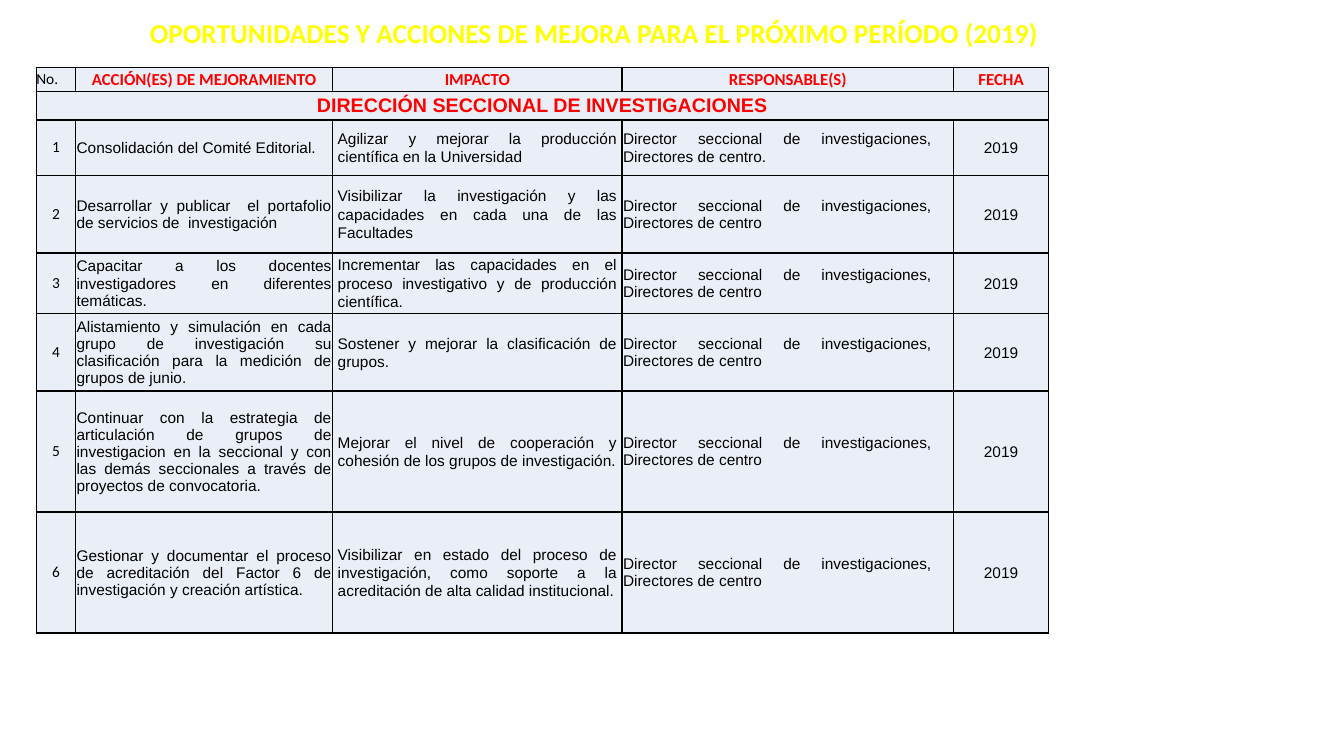
"""Build the slide of improvement actions for 2019."""
from lxml.etree import SubElement
from pptx import Presentation
from pptx.dml.color import RGBColor
from pptx.enum.text import MSO_ANCHOR as Anchor, PP_ALIGN as Align
from pptx.oxml.ns import qn
from pptx.util import Inches, Pt

YELLOW = RGBColor(0xFF, 0xFF, 0x00)
RED = RGBColor(0xFF, 0x00, 0x00)
BLACK = RGBColor(0x00, 0x00, 0x00)
PALE_BLUE = RGBColor(0xEA, 0xEF, 0xF7)

HEADINGS = ["No.", "ACCIÓN(ES) DE MEJORAMIENTO", "IMPACTO", "RESPONSABLE(S)", "FECHA"]
SECTION = "DIRECCIÓN SECCIONAL DE INVESTIGACIONES"
RESPONSIBLE = "Director seccional de investigaciones,  Directores de centro"
ACTIONS = [
    ("Consolidación del Comité Editorial.",
     "Agilizar y mejorar la producción científica en la Universidad"),
    ("Desarrollar y publicar  el portafolio de servicios de  investigación",
     "Visibilizar la investigación y las capacidades en cada una de las Facultades"),
    ("Capacitar a los docentes investigadores en diferentes temáticas.",
     "Incrementar las capacidades en el proceso investigativo y de producción científica."),
    ("Alistamiento y simulación en cada grupo de investigación su clasificación "
     "para la medición de grupos de junio.",
     "Sostener y mejorar la clasificación de grupos."),
    ("Continuar con la estrategia de articulación de grupos de investigacion en la "
     "seccional y con las demás seccionales a través de proyectos de convocatoria.",
     "Mejorar el nivel de cooperación y cohesión de los grupos de investigación."),
    ("Gestionar y documentar el proceso de acreditación del Factor 6 de investigación "
     "y creación artística.",
     "Visibilizar en estado del proceso de investigación, como soporte a la "
     "acreditación de alta calidad institucional."),
]
COLUMN_WIDTHS = [0.39, 2.55, 2.87, 3.29, 0.94]
ROW_HEIGHTS = [0.24, 0.28, 0.55, 0.77, 0.6, 0.77, 1.2, 1.2]


def write(frame, text, size=11, font="Arial", color=BLACK, bold=False,
          align=Align.CENTER, spacing=None, insets=(0, 0, 0, 0)):
    frame.margin_left, frame.margin_top, frame.margin_right, frame.margin_bottom = map(Inches, insets)
    frame.vertical_anchor = Anchor.MIDDLE
    para = frame.text_frame.paragraphs[0] if hasattr(frame, "text_frame") else frame.paragraphs[0]
    para.alignment = align
    if spacing:
        para.line_spacing = spacing
    span = para.add_run()
    span.text = text
    span.font.size = Pt(size)
    span.font.name = font
    span.font.bold = bold
    span.font.color.rgb = color


deck = Presentation()
deck.slide_width, deck.slide_height = Inches(13.33), Inches(7.5)
page = deck.slides.add_slide(deck.slide_layouts[5])

title = page.shapes.title
title.left, title.top, title.width, title.height = map(Inches, (0.58, 0.05, 10.63, 0.55))
write(title.text_frame, "OPORTUNIDADES Y ACCIONES DE MEJORA PARA EL PRÓXIMO PERÍODO (2019)",
      size=19.5, font="Calibri", color=YELLOW, bold=True)

table = page.shapes.add_table(
    len(ROW_HEIGHTS), len(COLUMN_WIDTHS), Inches(0.36), Inches(0.67),
    Inches(sum(COLUMN_WIDTHS)), Inches(sum(ROW_HEIGHTS))).table
for column, width in zip(table.columns, COLUMN_WIDTHS):
    column.width = Inches(width)
for row, height in zip(table.rows, ROW_HEIGHTS):
    row.height = Inches(height)

for cell in table.iter_cells():
    properties = cell._tc.get_or_add_tcPr()
    for side in ("a:lnL", "a:lnR", "a:lnT", "a:lnB"):
        border = SubElement(properties, qn(side), w=str(Pt(1)))
        SubElement(SubElement(border, qn("a:solidFill")), qn("a:srgbClr"), val=str(BLACK))
    cell.fill.solid()
    cell.fill.fore_color.rgb = PALE_BLUE

write(table.cell(0, 0), HEADINGS[0], font="Calibri", align=Align.JUSTIFY)
for index, heading in enumerate(HEADINGS[1:], 1):
    write(table.cell(0, index), heading, size=12, font="Calibri", color=RED, bold=True)

table.cell(1, 0).merge(table.cell(1, 4))
write(table.cell(1, 0), SECTION, size=14, color=RED, bold=True)

THIN = (0.01, 0.01, 0.01, 0)
for number, (action, impact) in enumerate(ACTIONS, 1):
    row = number + 1
    responsible = RESPONSIBLE + "." if number == 1 else RESPONSIBLE
    write(table.cell(row, 0), str(number), font="Calibri")
    write(table.cell(row, 1), action, align=Align.JUSTIFY, insets=THIN)
    write(table.cell(row, 2), impact, align=Align.JUSTIFY, spacing=1.07, insets=(0.05, 0, 0.05, 0))
    write(table.cell(row, 3), responsible, align=Align.JUSTIFY, insets=THIN)
    write(table.cell(row, 4), "2019", insets=THIN)

deck.save("out.pptx")
